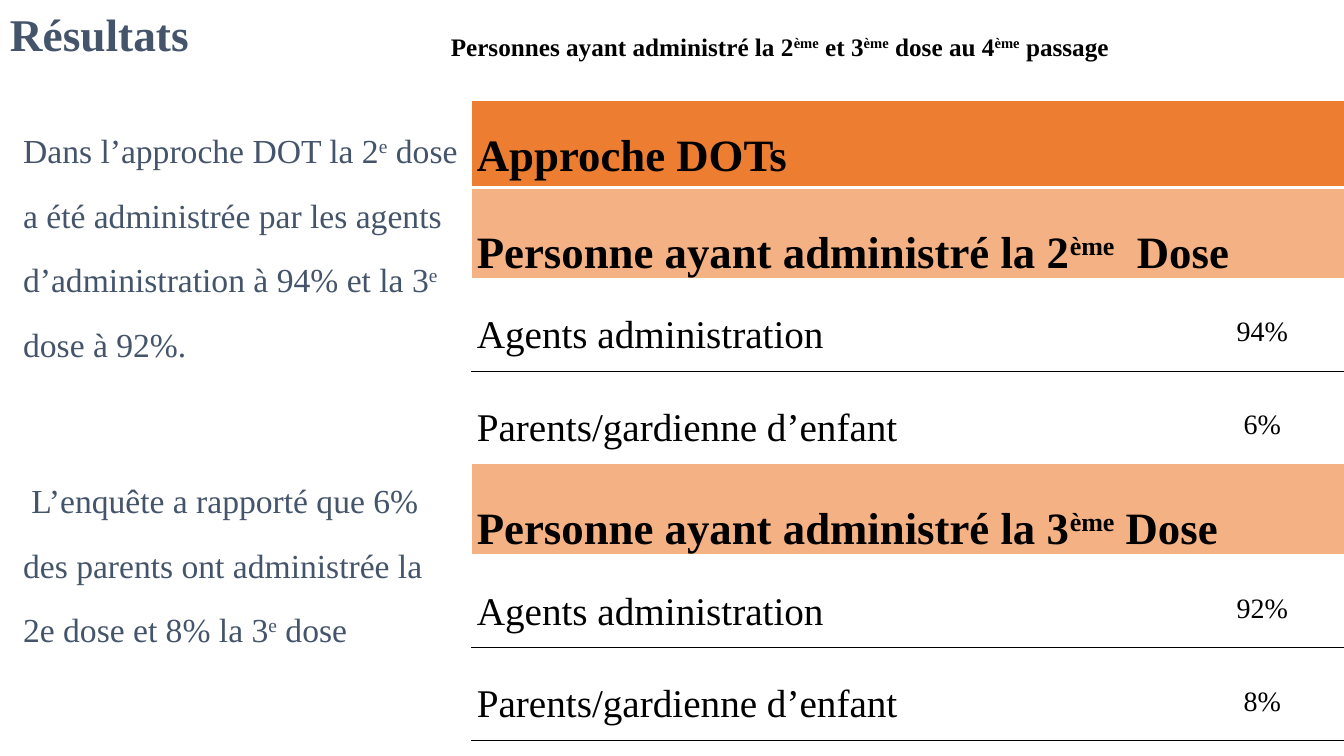
from dataclasses import dataclass

from lxml import etree
from pptx import Presentation
from pptx.dml.color import RGBColor
from pptx.enum.text import MSO_ANCHOR, MSO_AUTO_SIZE, PP_ALIGN
from pptx.oxml.ns import qn
from pptx.util import Pt

LEFT, CENTER = PP_ALIGN.LEFT, PP_ALIGN.CENTER
TOP, MIDDLE, BOTTOM = MSO_ANCHOR.TOP, MSO_ANCHOR.MIDDLE, MSO_ANCHOR.BOTTOM
GROW = MSO_AUTO_SIZE.SHAPE_TO_FIT_TEXT


@dataclass(frozen=True)
class Theme:
    font: str = "Times New Roman"
    slate: RGBColor = RGBColor(0x44, 0x54, 0x6A)
    black: RGBColor = RGBColor(0, 0, 0)
    white: RGBColor = RGBColor(0xFF, 0xFF, 0xFF)
    orange: RGBColor = RGBColor(0xED, 0x7D, 0x31)
    peach: RGBColor = RGBColor(0xF4, 0xB1, 0x83)
    title: float = 32.4
    heading: float = 32
    label: float = 28
    body: float = 24
    value: float = 20
    caption: float = 18


THEME = Theme()

# Text between carets is superscript
COMMENTS = [
    "Dans l’approche DOT la 2^e^ dose a été administrée par les agents "
    "d’administration à 94% et la 3^e^ dose à 92%.",
    " L’enquête a rapporté que 6% des parents ont administrée la 2e dose "
    "et 8% la 3^e^ dose",
]
CAPTION = "Personnes ayant administré la 2^ème^ et 3^ème^ dose au 4^ème^ passage"
AGENTS, PARENTS = "Agents administration", "Parents/gardienne d’enfant"

COLUMN_WIDTHS = [329, 6.5, 10.8, 149, 118.8]
TITLE_HEIGHT, BAND_HEIGHT, DATA_HEIGHT = 62, 64.8, 66.3


def write_paragraph(paragraph, text, size, color, bold=False, align=LEFT,
                    spacing=1.5, after=10):
    paragraph.alignment = align
    paragraph.line_spacing = spacing
    paragraph.space_after = Pt(after)
    font = paragraph.font
    font.name, font.size, font.bold = THEME.font, Pt(size), bold
    font.color.rgb = color
    for index, part in enumerate(text.split("^")):
        run = paragraph.add_run()
        run.text = part
        if index % 2:
            run._r.get_or_add_rPr().set("baseline", "30000")


def add_text(slide, box, texts, size, color, anchor=TOP, gap=0, **style):
    shape = slide.shapes.add_textbox(*map(Pt, box))
    frame = shape.text_frame
    frame.word_wrap = True
    frame.vertical_anchor = anchor
    for index, text in enumerate(texts):
        paragraph = frame.add_paragraph() if index else frame.paragraphs[0]
        write_paragraph(paragraph, text, size, color, **style)
        if index:
            paragraph.space_before = Pt(gap)
    return frame


def set_borders(cell, top, bottom, bottom_width):
    edges = [("a:lnL", THEME.white, 1), ("a:lnR", THEME.white, 1),
             ("a:lnT", top, 1), ("a:lnB", bottom, bottom_width)]
    properties = cell._tc.get_or_add_tcPr()
    for tag, color, width in edges:
        line = etree.SubElement(properties, qn(tag), w=str(Pt(width)))
        fill = etree.SubElement(line, qn("a:solidFill"))
        etree.SubElement(fill, qn("a:srgbClr"), val=str(color))


def style_row(table, row, fill, top, bottom, bottom_width=1):
    for cell in table.rows[row].cells:
        set_borders(cell, top, bottom, bottom_width)
        cell.fill.solid()
        cell.fill.fore_color.rgb = fill


def write_cell(cell, text, size, anchor=MIDDLE, **style):
    cell.margin_left = cell.margin_right = Pt(3.6)
    cell.margin_top = cell.margin_bottom = 0
    cell.vertical_anchor = anchor
    write_paragraph(cell.text_frame.paragraphs[0], text, size, THEME.black, **style)


def add_band(table, row, text, fill, anchor, bottom_width=1):
    style_row(table, row, fill, THEME.white, THEME.white, bottom_width)
    table.cell(row, 0).merge(table.cell(row, len(COLUMN_WIDTHS) - 1))
    write_cell(table.cell(row, 0), text, THEME.heading, anchor, bold=True)


def add_data_row(table, row, label, value, merge_from, top, bottom):
    style_row(table, row, THEME.white, top, bottom)
    table.cell(row, merge_from).merge(table.cell(row, merge_from + 1))
    write_cell(table.cell(row, 0), label, THEME.label)
    write_cell(table.cell(row, len(COLUMN_WIDTHS) - 1), value, THEME.value, align=CENTER)


def add_dose_table(slide):
    heights = [TITLE_HEIGHT] + [BAND_HEIGHT, DATA_HEIGHT, DATA_HEIGHT] * 2
    table = slide.shapes.add_table(
        len(heights), len(COLUMN_WIDTHS), Pt(337), Pt(72),
        Pt(sum(COLUMN_WIDTHS)), Pt(sum(heights))).table
    table.first_row = table.horz_banding = False
    for column, width in zip(table.columns, COLUMN_WIDTHS):
        column.width = Pt(width)
    for row, height in zip(table.rows, heights):
        row.height = Pt(height)

    add_band(table, 0, "Approche DOTs", THEME.orange, MIDDLE, bottom_width=3)
    white, black = THEME.white, THEME.black
    doses = [("2^ème^  Dose", "94%", "6%", 1, white),
             ("3^ème^ Dose", "92%", "8%", 0, black)]
    for index, (dose, agents, parents, merge_from, last_line) in enumerate(doses):
        row = 1 + 3 * index
        add_band(table, row, f"Personne ayant administré la {dose}", THEME.peach, BOTTOM)
        add_data_row(table, row + 1, AGENTS, agents, merge_from, white, black)
        add_data_row(table, row + 2, PARENTS, parents, merge_from, black, last_line)


def main():
    presentation = Presentation()
    presentation.slide_width, presentation.slide_height = Pt(960), Pt(540)
    slide = presentation.slides.add_slide(presentation.slide_layouts[6])

    # Title and comments
    add_text(slide, (0, 4, 353.5, 44), ["Résultats"], THEME.title, THEME.slate,
             MIDDLE, bold=True, spacing=0.9, after=0)
    add_text(slide, (9.4, 72, 327.6, 458), COMMENTS, THEME.body, THEME.slate,
             gap=56, spacing=1.6)

    # Table with its caption
    caption = add_text(slide, (175.7, 8, 762.5, 40), [CAPTION], THEME.caption,
                       THEME.black, bold=True, align=CENTER)
    caption.auto_size = GROW
    add_dose_table(slide)

    presentation.save("out.pptx")


if __name__ == "__main__":
    main()
